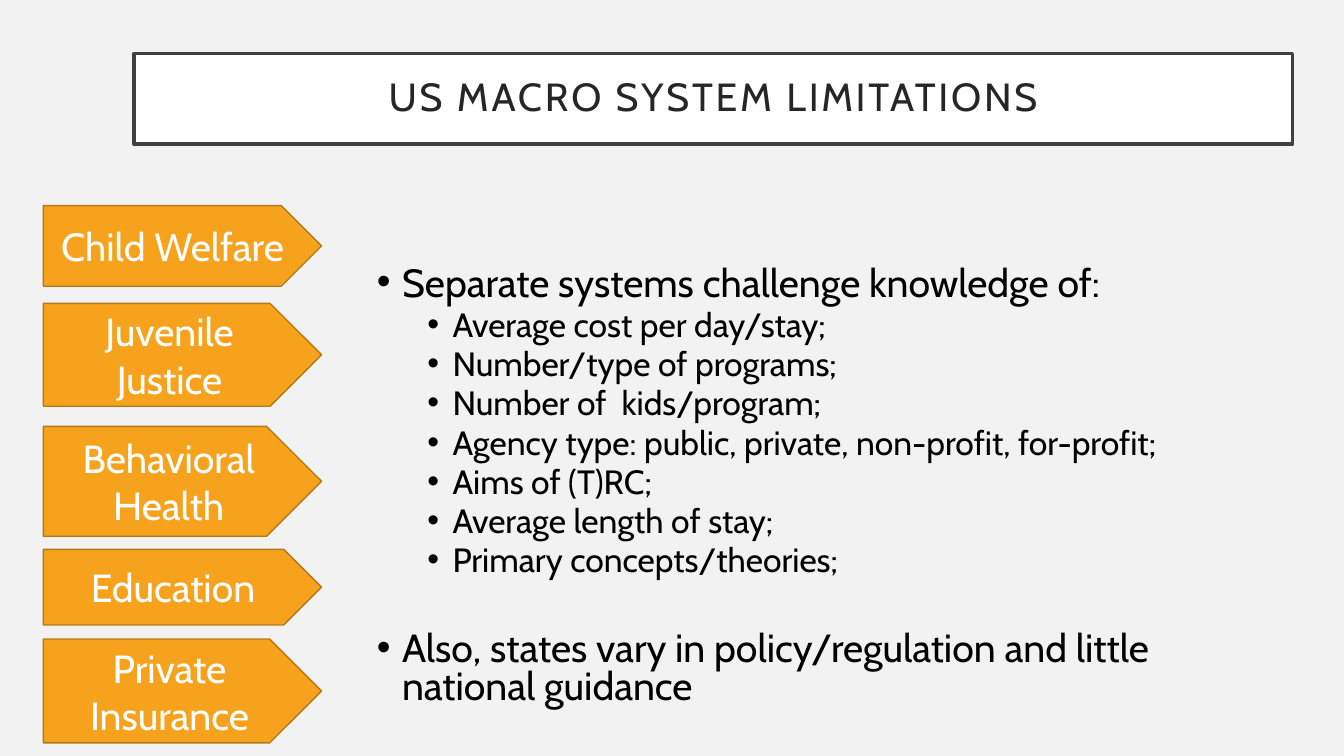
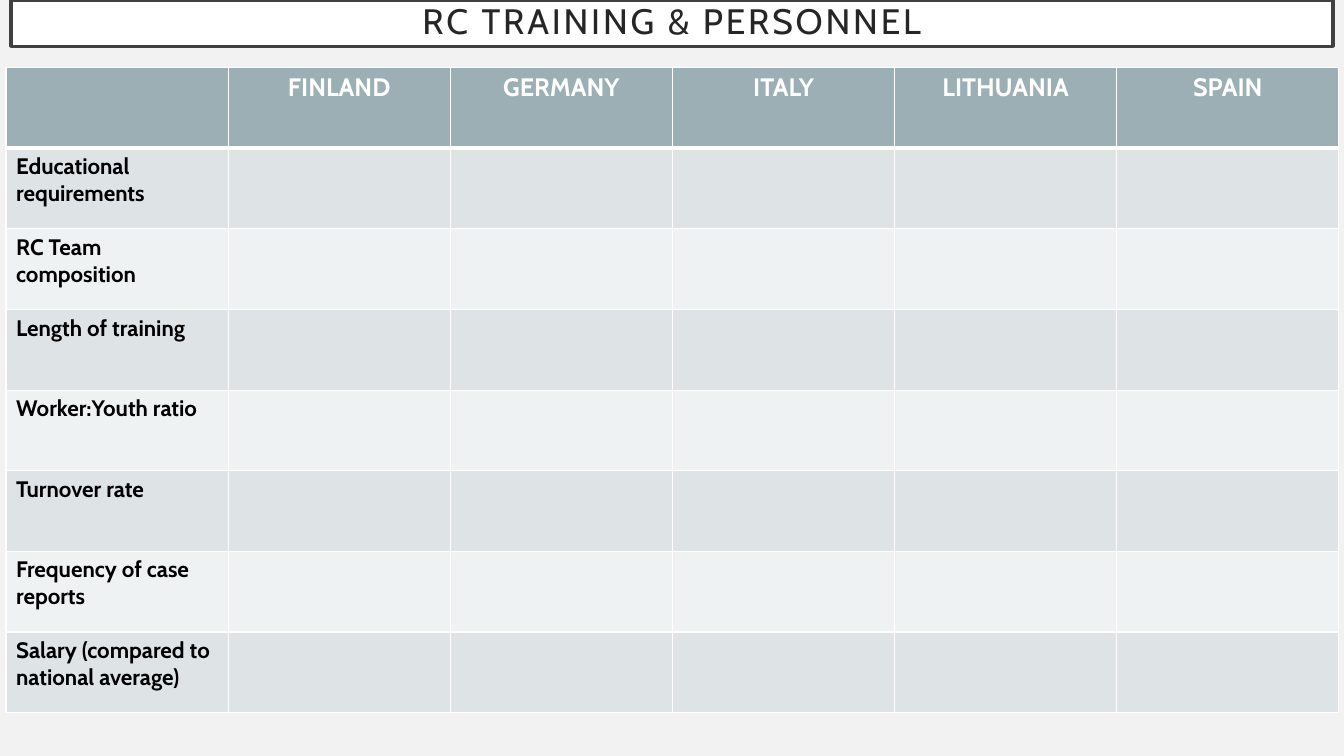
from dataclasses import dataclass

from lxml.etree import SubElement
from pptx import Presentation
from pptx.dml.color import RGBColor
from pptx.enum.shapes import MSO_SHAPE
from pptx.enum.text import MSO_ANCHOR, PP_ALIGN
from pptx.oxml.ns import qn
from pptx.util import Inches, Pt


@dataclass(frozen=True)
class Theme:
    font: str = "Cabin"
    background: str = "F2F2F2"
    white: str = "FFFFFF"
    black: str = "000000"
    title_text: str = "262626"
    title_line: str = "404040"
    arrow: str = "F6A21D"
    arrow_line: str = "B67815"
    header: str = "9BAFB5"
    bands: tuple = ("DEE3E5", "EFF2F3")
    title_size: float = 28
    small_title_size: float = 25.2
    body_size: float = 28
    detail_size: float = 24
    header_size: float = 18
    label_size: float = 16


theme = Theme()


def add_run(paragraph, text, size, color, bold=False):
    run = paragraph.add_run()
    run.text = text
    run.font.name = theme.font
    run.font.size = Pt(size)
    run.font.bold = bold
    run.font.color.rgb = RGBColor.from_string(color)
    return run


def add_box(slide, kind, box, fill, line, line_width, text, size, color):
    shape = slide.shapes.add_shape(kind, *map(Inches, box))
    shape.shadow.inherit = False
    shape.fill.solid()
    shape.fill.fore_color.rgb = RGBColor.from_string(fill)
    shape.line.color.rgb = RGBColor.from_string(line)
    shape.line.width = Pt(line_width)
    shape.text_frame.word_wrap = True
    shape.text_frame.vertical_anchor = MSO_ANCHOR.MIDDLE
    paragraph = shape.text_frame.paragraphs[0]
    paragraph.alignment = PP_ALIGN.CENTER
    add_run(paragraph, text, size, color)
    return shape


presentation = Presentation()
presentation.slide_width = Inches(13.33)
presentation.slide_height = Inches(7.5)

# Slides with their framed titles
titles = [
    ("US MACRO SYSTEM LIMITATIONS", (1.33, 0.53, 11.49, 0.9), theme.title_size),
    ("RC TRAINING & PERSONNEL", (0.11, 0, 13.11, 0.46), theme.small_title_size),
]
slides = []
for text, box, size in titles:
    slide = presentation.slides.add_slide(presentation.slide_layouts[6])
    slide.background.fill.solid()
    slide.background.fill.fore_color.rgb = RGBColor.from_string(theme.background)
    title = add_box(slide, MSO_SHAPE.RECTANGLE, box, theme.white,
                    theme.title_line, 2.5, text, size, theme.title_text)
    frame = title.text_frame
    frame.margin_left = frame.margin_right = Inches(0.2)
    frame.margin_top = frame.margin_bottom = Inches(0.2)
    frame.paragraphs[0].line_spacing = 0.9
    frame.paragraphs[0].runs[0].font._element.set("spc", "200")
    slides.append(slide)
limits_slide, training_slide = slides

# Slide 1: bulleted text (text, level, space before)
details = [
    "Average cost per day/stay;",
    "Number/type of programs;",
    "Number of  kids/program;",
    "Agency type: public, private, non-profit, for-profit;",
    "Aims of (T)RC;",
    "Average length of stay;",
    "Primary concepts/theories;",
]
bullets = [
    ("Separate systems challenge knowledge of:", 0, 10),
    *[(detail, 1, 5) for detail in details],
    ("Also, states vary in policy/regulation and little national guidance", 0, 38),
]
body = limits_slide.shapes.add_textbox(
    Inches(3.64), Inches(2.6), Inches(8.2), Inches(4.76))
frame = body.text_frame
frame.word_wrap = True
for index, (text, level, space_before) in enumerate(bullets):
    paragraph = frame.add_paragraph() if index else frame.paragraphs[0]
    paragraph.level = level
    paragraph.line_spacing = 0.8
    paragraph.space_before = Pt(space_before)
    properties = paragraph._p.get_or_add_pPr()
    properties.set("marL", str(Inches(0.25 + 0.5 * level)))
    properties.set("indent", str(Inches(-0.25)))
    SubElement(properties, qn("a:buFont"), typeface="Arial")
    SubElement(properties, qn("a:buChar"), char="•")
    size = theme.detail_size if level else theme.body_size
    add_run(paragraph, text, size, theme.black)

# Slide 1: arrows for the separate systems (text, top, height)
systems = [
    ("Child Welfare", 2.04, 0.8),
    ("Juvenile Justice", 3.01, 1.02),
    ("Behavioral Health", 4.23, 1.09),
    ("Education", 5.45, 0.75),
    ("Private Insurance", 6.34, 1.03),
]
for text, top, height in systems:
    add_box(limits_slide, MSO_SHAPE.PENTAGON, (0.43, top, 2.76, height), theme.arrow,
            theme.arrow_line, 1, text, theme.body_size, theme.white)

# Slide 2: table of countries and topics
countries = ["FINLAND", "GERMANY", "ITALY", "LITHUANIA", "SPAIN"]
topics = [
    "Educational requirements",
    "RC Team composition",
    "Length of training",
    "Worker:Youth ratio",
    "Turnover rate",
    "Frequency of case reports",
    "Salary (compared to national average)",
]
rows = [["", *countries]] + [[topic] + [""] * len(countries) for topic in topics]
table = training_slide.shapes.add_table(
    len(rows), len(rows[0]), Inches(0.06), Inches(0.67),
    Inches(13.22), Inches(6.4)).table
for row_index, row in enumerate(rows):
    is_header = row_index == 0
    fill = theme.header if is_header else theme.bands[(row_index - 1) % 2]
    for column_index, text in enumerate(row):
        cell = table.cell(row_index, column_index)
        properties = cell._tc.get_or_add_tcPr()
        for side in ("L", "R", "T", "B"):
            thick = (is_header and side == "B") or (row_index == 1 and side == "T")
            border = SubElement(properties, qn(f"a:ln{side}"),
                                w=str(Pt(3 if thick else 1)))
            solid = SubElement(border, qn("a:solidFill"))
            SubElement(solid, qn("a:srgbClr"), val=theme.white)
        cell.fill.solid()
        cell.fill.fore_color.rgb = RGBColor.from_string(fill)
        if text:
            paragraph = cell.text_frame.paragraphs[0]
            paragraph.alignment = PP_ALIGN.CENTER if is_header else PP_ALIGN.LEFT
            size = theme.header_size if is_header else theme.label_size
            color = theme.white if is_header else theme.black
            add_run(paragraph, text, size, color, bold=True)

presentation.save("out.pptx")
